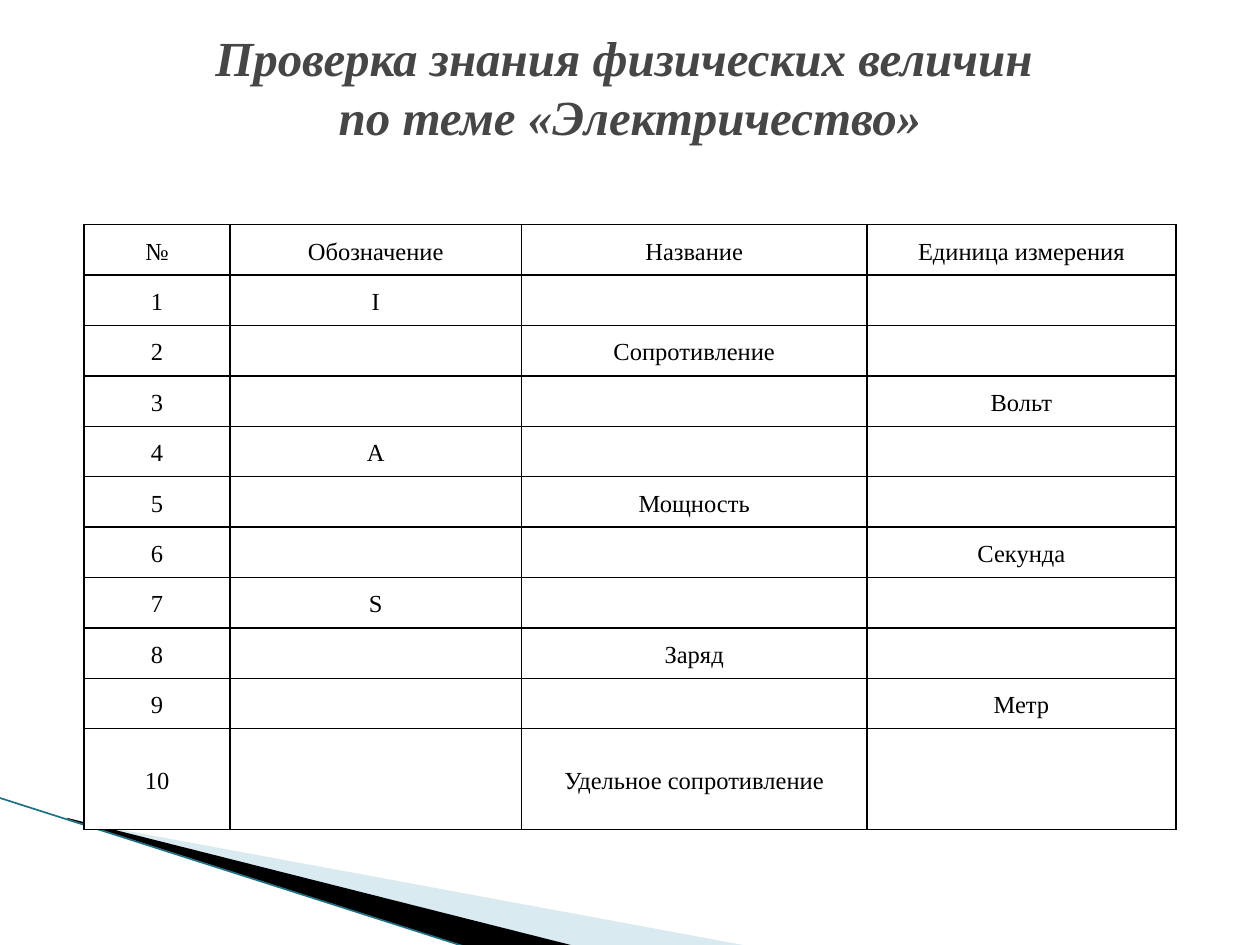
from lxml import etree
from pptx import Presentation
from pptx import util as u
from pptx.dml import color
from pptx.enum import text
from pptx.oxml import ns

Pt = u.Pt
FONT = "Times New Roman"
COLORS = {
    "title": "464646",
    "ink": "000000",
    "paper": "FFFFFF",
    "pale": "A0CBDC",
    "edge": "1F7083",
}
TITLE = "Проверка знания физических величин \vпо теме «Электричество»"
HEADINGS = ["№", "Обозначение", "Название", "Единица измерения"]
# Each quantity is given by one known entry: its column and its wording
KNOWN = [
    (1, "I"), (2, "Сопротивление"), (3, "Вольт"),
    (1, "А"), (2, "Мощность"), (3, "Секунда"),
    (1, "S"), (2, "Заряд"), (3, "Метр"),
    (2, "Удельное сопротивление"),
]
COLUMN_WIDTHS = [83.5, 166.5, 197.5, 176.5]
ROW_HEIGHTS = [26.6] + [28.8] * 10 + [57.6]


def rgb(name):
    return color.RGBColor.from_string(COLORS[name])


def apply(target, formats):
    for name, value in formats.items():
        setattr(target, name, value)


def set_borders(cell, visible):
    """Draw the named sides in black and hide the others."""
    properties = cell._tc.get_or_add_tcPr()
    for position, side in enumerate(("lnL", "lnR", "lnT", "lnB")):
        line = etree.Element(ns.qn(f"a:{side}"), w=str(Pt(1)))
        if side in visible:
            fill = etree.SubElement(line, ns.qn("a:solidFill"))
            etree.SubElement(fill, ns.qn("a:srgbClr"), val=COLORS["ink"])
        else:
            etree.SubElement(line, ns.qn("a:noFill"))
        properties.insert(position, line)


def set_frame(wedge, left, top, width, height):
    """Give the wedge a frame of its own; its outline stays in place."""
    shift = dict(x=wedge.left - Pt(left), y=wedge.top - Pt(top))
    apply(wedge, dict(left=Pt(left), top=Pt(top), width=Pt(width), height=Pt(height)))
    outline = wedge._element.spPr.find(".//" + ns.qn("a:path"))
    outline.set("w", str(Pt(width)))
    outline.set("h", str(Pt(height)))
    for point in outline.iter(ns.qn("a:pt")):
        for axis, offset in shift.items():
            point.set(axis, str(int(point.get(axis)) + offset))


def add_wedge(slide, left, top, points, frame, fill, alpha=None):
    outline = [(Pt(left + x), Pt(top + y)) for x, y in points]
    builder = slide.shapes.build_freeform(*outline[0])
    builder.add_line_segments(outline[1:], close=True)
    wedge = builder.convert_to_shape()
    x, y, width, height = frame
    set_frame(wedge, left + x, top + y, width, height)
    wedge.shadow.inherit = False
    wedge.fill.solid()
    wedge.fill.fore_color.rgb = rgb(fill)
    wedge.line.fill.background()
    if alpha is not None:
        tone = wedge.fill._xPr.find(".//" + ns.qn("a:srgbClr"))
        etree.SubElement(tone, ns.qn("a:alpha"), val=str(alpha * 1000))


def add_corner(slide, left, top):
    """Place the wedges and their edge line in the lower left corner."""
    add_wedge(slide, left, top, [(39.6, 12.7), (428.4, 84.7), (328.3, 84.7), (39.6, 12)],
              (56.2, -62.2, 299.5, 113.8), "pale", 40)
    add_wedge(slide, left, top, [(38.2, 11.3), (329, 84.7), (267.8, 85.4), (38.9, 12)],
              (-4.3, -0.2, 299.5, 66.2), "ink")
    edge = slide.shapes.add_connector(
        1, Pt(left - 0.7), Pt(top - 0.2), Pt(left + 267.1), Pt(top + 85.4))
    edge.line.color.rgb = rgb("edge")
    edge.line.width = Pt(0.95)
    etree.SubElement(edge._element.spPr, ns.qn("a:effectLst"))


def place_title(slide, left, top, width, height):
    title = slide.shapes.title
    apply(title, dict(left=Pt(left), top=Pt(top), width=Pt(width), height=Pt(height)))
    frame = title.text_frame
    frame.text = TITLE
    apply(frame, dict(
        word_wrap=True, auto_size=text.MSO_AUTO_SIZE.NONE,
        vertical_anchor=text.MSO_ANCHOR.MIDDLE,
        margin_top=0, margin_bottom=Pt(34)))
    paragraph = frame.paragraphs[0]
    apply(paragraph, dict(alignment=text.PP_ALIGN.CENTER, line_spacing=1.0))
    for run in paragraph.runs:
        apply(run.font, dict(name=FONT, size=Pt(28), bold=True, italic=True))
        run.font.color.rgb = rgb("title")


def fill_cell(cell, wording):
    apply(cell, dict(
        vertical_anchor=text.MSO_ANCHOR.MIDDLE,
        margin_left=Pt(5), margin_right=Pt(5), margin_top=0, margin_bottom=0))
    cell.fill.solid()
    cell.fill.fore_color.rgb = rgb("paper")
    if wording:
        paragraph = cell.text_frame.paragraphs[0]
        apply(paragraph, dict(alignment=text.PP_ALIGN.CENTER, line_spacing=1.15))
        run = paragraph.add_run()
        run.text = wording
        apply(run.font, dict(name=FONT, size=Pt(14), bold=False))
        run.font.color.rgb = rgb("ink")


def add_quantities(slide, left, top):
    """Place the table; an empty unframed row runs above the headings."""
    rows = [[""] * len(HEADINGS), HEADINGS]
    for number, (known_column, wording) in enumerate(KNOWN, 1):
        row = [str(number), "", "", ""]
        row[known_column] = wording
        rows.append(row)

    table = slide.shapes.add_table(
        len(rows), len(HEADINGS), Pt(left), Pt(top),
        Pt(sum(COLUMN_WIDTHS)), Pt(sum(ROW_HEIGHTS))).table
    apply(table, dict(first_row=False, horz_banding=False))
    for column, width in zip(table.columns, COLUMN_WIDTHS):
        column.width = Pt(width)
    for row, height in zip(table.rows, ROW_HEIGHTS):
        row.height = Pt(height)
    for r, row in enumerate(rows):
        sides = ("lnL", "lnR", "lnT", "lnB") if r else ("lnB",)
        for c, wording in enumerate(row):
            fill_cell(table.cell(r, c), wording)
            set_borders(table.cell(r, c), sides)
    table.cell(0, 1).merge(table.cell(0, 3))


def main():
    deck = Presentation()
    apply(deck, dict(slide_width=Pt(720), slide_height=Pt(540)))
    slide = deck.slides.add_slide(deck.slide_layouts[5])
    add_corner(slide, 0, 456)
    place_title(slide, 36, 21.6, 648, 90)
    add_quantities(slide, 48, 101.8)
    deck.save("out.pptx")


if __name__ == "__main__":
    main()
